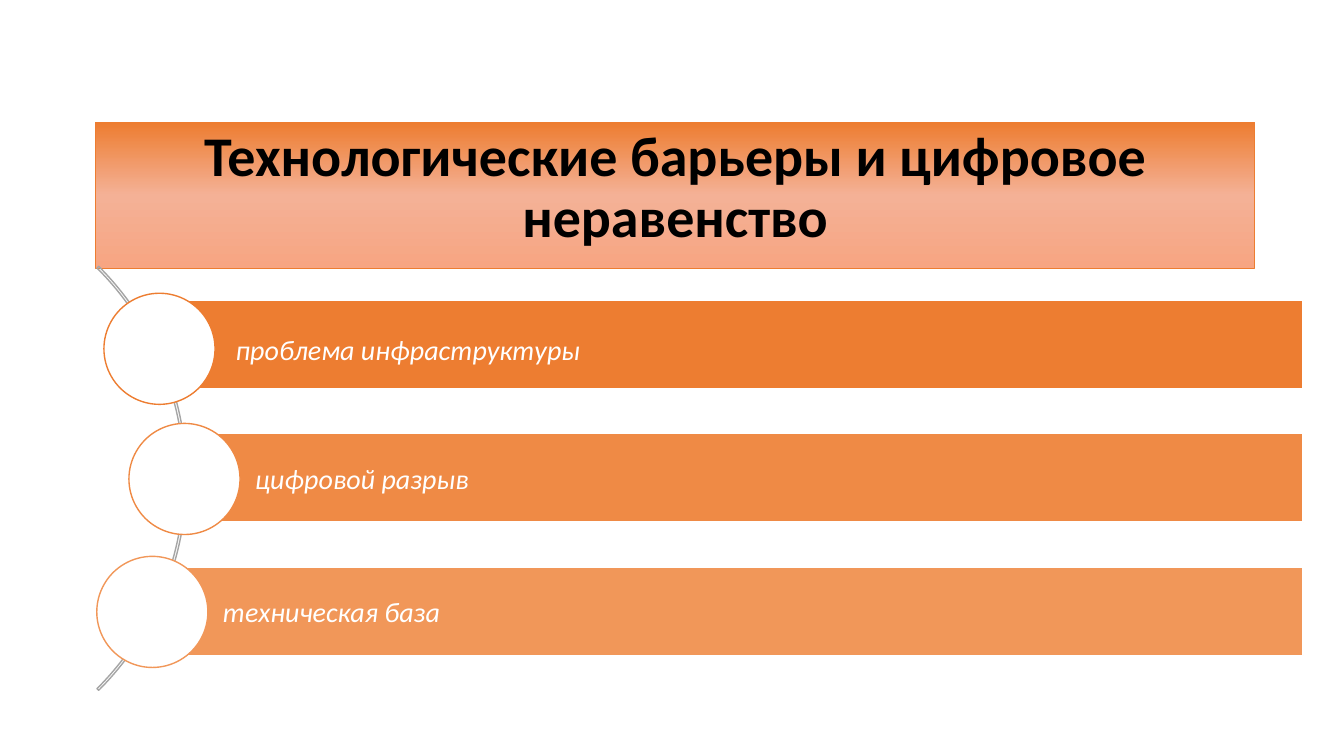
from copy import deepcopy

from pptx import Presentation
from pptx.dml.color import RGBColor
from pptx.enum.shapes import MSO_SHAPE as Preset
from pptx.enum.text import MSO_ANCHOR as Anchor, MSO_AUTO_SIZE as AutoSize, PP_ALIGN as Align
from pptx.oxml.ns import qn
from pptx.util import Cm, Pt

TITLE = "Технологические барьеры и цифровое неравенство"
COLORS = {
    "black": "000000", "white": "FFFFFF", "gray": "A5A5A5", "orange": "ED7D31",
    "orange_mid": "EF8A45", "orange_light": "F19759",
    "peach": "F4B196", "salmon": "F7A582",
}
TITLE_GRADIENT = [(0, "orange"), (0.5, "peach"), (1, "salmon")]
BARRIERS = [
    {"text": "проблема инфраструктуры", "color": "orange", "bar_left": 3.84,
     "circle": (2.62, 7.39), "indent": 2.1, "top_inset": 0.4},
    {"text": "цифровой разрыв", "color": "orange_mid", "bar_left": 4.65,
     "circle": (3.25, 10.67), "indent": 1.78, "top_inset": 0.15},
    {"text": "техническая база", "color": "orange_light", "bar_left": 3.84,
     "circle": (2.44, 14.02), "indent": 1.78, "top_inset": 0.15},
]
BAR_TOP, BAR_PITCH, BAR_HEIGHT, BAR_RIGHT = 7.57, 3.36, 2.23, 32.84
CIRCLE_SIZE = 2.8
ARC_BOX = (-10.41, 4.5, 15.11, 15.11)
ARC_ADJUSTMENTS = (189, 27, 0.004)


def rgb(name):
    return RGBColor.from_string(COLORS[name])


def set_line(shape, color, width=1):
    shape.line.color.rgb = rgb(color)
    shape.line.width = Pt(width)


def add_preset(shapes, preset, box, fill, line):
    shape = shapes.add_shape(preset, *map(Cm, box))
    shape.shadow.inherit = False
    if fill:
        shape.fill.solid()
        shape.fill.fore_color.rgb = rgb(fill)
    else:
        shape.fill.background()
    set_line(shape, line)
    return shape


def write(shape, text, size, color, align, insets, bold=False, italic=False, spacing=1.0):
    frame = shape.text_frame
    frame.word_wrap = True
    frame.auto_size = AutoSize.NONE
    frame.vertical_anchor = Anchor.MIDDLE
    frame.margin_left, frame.margin_top, frame.margin_right, frame.margin_bottom = map(Cm, insets)
    frame.text = text
    paragraph = frame.paragraphs[0]
    paragraph.alignment = align
    paragraph.line_spacing = spacing
    font = paragraph.runs[0].font
    font.name, font.size, font.bold, font.italic = "Calibri", Pt(size), bold, italic
    font.color.rgb = rgb(color)


def format_title(title):
    title.left, title.top, title.width, title.height = map(Cm, (2.41, 3.08, 29.21, 3.68))
    title.fill.gradient()
    title.fill.gradient_angle = 270
    stop_list = next(title.element.iter(qn("a:gsLst")))
    stop_list.append(deepcopy(stop_list[0]))
    for stop, (position, color) in zip(title.fill.gradient_stops, TITLE_GRADIENT):
        stop.position = position
        stop.color.rgb = rgb(color)
    set_line(title, "orange", 0.5)
    write(title, TITLE, 40, "black", Align.CENTER, (0.25, 0.13, 0.25, 0.45),
          bold=True, spacing=0.9)


def add_barriers(shapes):
    arc = add_preset(shapes, Preset.BLOCK_ARC, ARC_BOX, None, "gray")
    for index, value in enumerate(ARC_ADJUSTMENTS):
        arc.adjustments[index] = value
    for row, barrier in enumerate(BARRIERS):
        left = barrier["bar_left"]
        bar_box = (left, BAR_TOP + row * BAR_PITCH, BAR_RIGHT - left, BAR_HEIGHT)
        bar = add_preset(shapes, Preset.RECTANGLE, bar_box, barrier["color"], "white")
        insets = (barrier["indent"], barrier["top_inset"], 0.15, 0.15)
        write(bar, barrier["text"], 20, "white", Align.LEFT, insets, italic=True)
        circle_box = (*barrier["circle"], CIRCLE_SIZE, CIRCLE_SIZE)
        add_preset(shapes, Preset.OVAL, circle_box, "white", barrier["color"])


def main():
    presentation = Presentation()
    presentation.slide_width, presentation.slide_height = Cm(33.87), Cm(19.05)
    slide = presentation.slides.add_slide(presentation.slide_layouts[5])
    format_title(slide.shapes.title)
    add_barriers(slide.shapes.add_group_shape().shapes)
    presentation.save("out.pptx")


if __name__ == "__main__":
    main()
